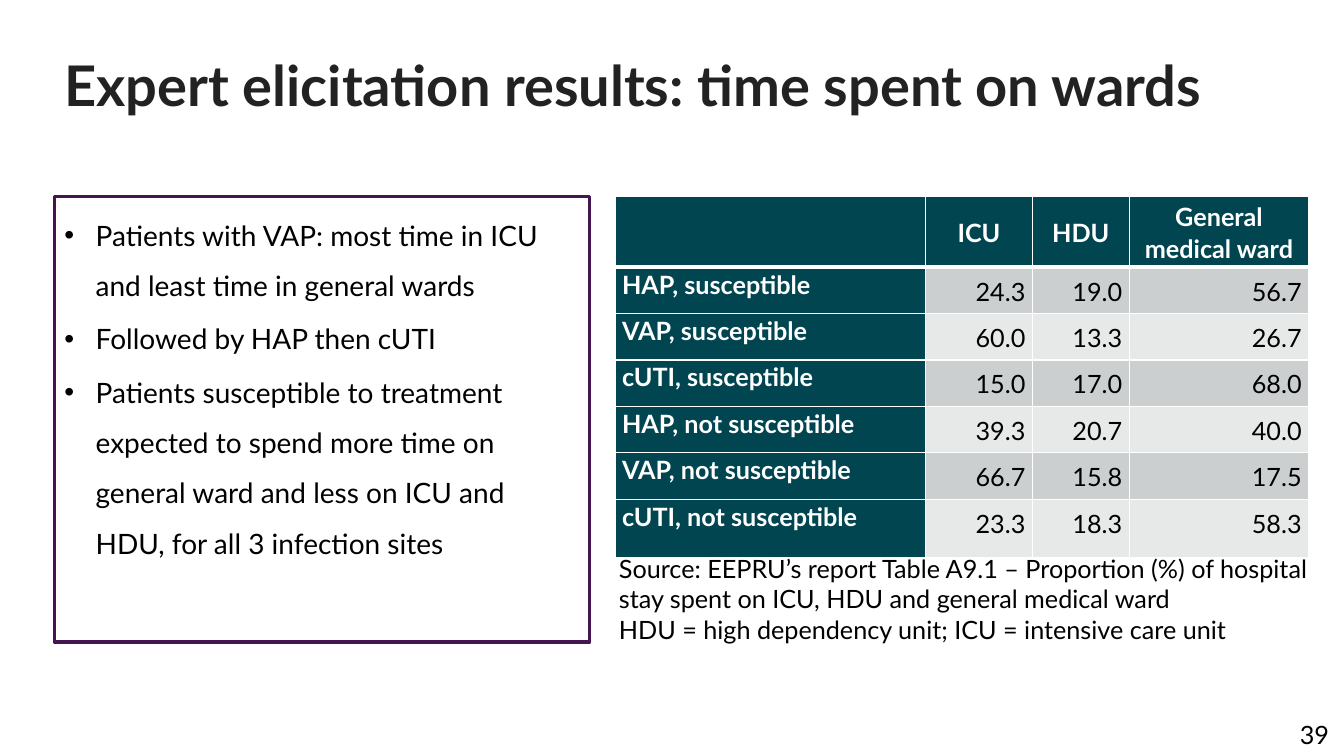
import pptx
import pptx.dml.color
import pptx.enum.text
import pptx.oxml
import pptx.oxml.ns
import pptx.util
from pptx.util import Inches, Pt

TITLE = "Expert elicitation results: time spent on wards"
FINDINGS = [
    "Patients with VAP: most time in ICU and least time in general wards",
    "Followed by HAP then cUTI",
    "Patients susceptible to treatment expected to spend more time on general ward "
    "and less on ICU and HDU, for all 3 infection sites",
]
WARD_TIMES = [
    ("", "ICU", "HDU", "General medical ward"),
    ("HAP, susceptible", "24.3", "19.0", "56.7"),
    ("VAP, susceptible", "60.0", "13.3", "26.7"),
    ("cUTI, susceptible", "15.0", "17.0", "68.0"),
    ("HAP, not susceptible", "39.3", "20.7", "40.0"),
    ("VAP, not susceptible", "66.7", "15.8", "17.5"),
    ("cUTI, not susceptible", "23.3", "18.3", "58.3"),
]
SOURCE_NOTES = [
    "Source: EEPRU’s report Table A9.1 – Proportion (%) of hospital stay spent on "
    "ICU, HDU and general medical ward",
    "HDU = high dependency unit; ICU = intensive care unit",
]
PAGE_NUMBER = "39"

COLUMN_WIDTHS = [3.08, 1.06, 0.96, 1.78]
ROW_HEIGHTS = [0.7] + [0.46] * 5 + [0.58]
TEAL, PURPLE, BLACK, WHITE = "004550", "451551", "000000", "FFFFFF"
BANDS = ["CCCFD0", "E7E9E9"]
ALIGN = pptx.enum.text.PP_ALIGN
ANCHOR = pptx.enum.text.MSO_ANCHOR


def rgb(color):
    return pptx.dml.color.RGBColor.from_string(color)


def set_font(paragraph, size, color=BLACK, bold=False):
    font = paragraph.font
    font.name, font.size, font.bold = "Lato", Pt(size), bold
    font.color.rgb = rgb(color)


def add_text(slide, box, lines, size):
    text = slide.shapes.add_textbox(*map(Inches, box))
    frame = text.text_frame
    frame.word_wrap = True
    frame.text = "\n".join(lines)
    for paragraph in frame.paragraphs:
        set_font(paragraph, size)
    return text


def add_bullet(paragraph, indent):
    props = paragraph._p.get_or_add_pPr()
    props.set("marL", str(Inches(indent)))
    props.set("indent", str(-Inches(indent)))
    namespace = pptx.oxml.ns.nsdecls("a")
    props.append(pptx.oxml.parse_xml(f'<a:buFont {namespace} typeface="Arial"/>'))
    props.append(pptx.oxml.parse_xml(f'<a:buChar {namespace} char="•"/>'))


def set_borders(cell, bottom):
    """Draw white borders, which must precede the fill in the cell's XML."""
    props = cell._tc.get_or_add_tcPr()
    namespace = pptx.oxml.ns.nsdecls("a")
    for index, (side, width) in enumerate(
        [("lnL", 1), ("lnR", 1), ("lnT", 1), ("lnB", bottom)]
    ):
        props.insert(index, pptx.oxml.parse_xml(
            f'<a:{side} {namespace} w="{Pt(width)}"><a:solidFill>'
            f'<a:srgbClr val="{WHITE}"/></a:solidFill></a:{side}>'))


def fill_cell(cell, value, row, column):
    header, label = row == 0, column == 0
    dark = header or label
    cell.text = value
    cell.fill.solid()
    cell.fill.fore_color.rgb = rgb(TEAL if dark else BANDS[(row - 1) % 2])
    cell.vertical_anchor = ANCHOR.MIDDLE if header else ANCHOR.TOP
    cell.margin_left = cell.margin_right = Inches(0.03 if header else 0.07)
    cell.margin_top = cell.margin_bottom = Inches(0 if dark else 0.07)
    paragraph = cell.text_frame.paragraphs[0]
    paragraph.alignment = ALIGN.CENTER if header else ALIGN.LEFT if label else ALIGN.RIGHT
    paragraph.line_spacing = 1.07
    paragraph.space_after = Pt(8)
    set_font(paragraph, 18, WHITE if dark else BLACK, dark)
    set_borders(cell, bottom=3 if header else 1)


def add_ward_table(slide, left, top):
    size = sum(COLUMN_WIDTHS), sum(ROW_HEIGHTS)
    table = slide.shapes.add_table(
        len(ROW_HEIGHTS), len(COLUMN_WIDTHS), *map(Inches, (left, top, *size))).table
    for column, width in zip(table.columns, COLUMN_WIDTHS):
        column.width = Inches(width)
    for row, height in zip(table.rows, ROW_HEIGHTS):
        row.height = Inches(height)
    for r, values in enumerate(WARD_TIMES):
        for c, value in enumerate(values):
            fill_cell(table.cell(r, c), value, r, c)


def main():
    deck = pptx.Presentation()
    deck.slide_width, deck.slide_height = Inches(13.33), Inches(7.5)
    slide = deck.slides.add_slide(deck.slide_layouts[5])

    title = slide.shapes.title
    title.left, title.top, title.width, title.height = map(Inches, (0.54, 0.53, 12.12, 1.4))
    title.text_frame.text = TITLE
    title.text_frame.vertical_anchor = ANCHOR.TOP
    heading = title.text_frame.paragraphs[0]
    heading.alignment = ALIGN.LEFT
    heading.line_spacing = 0.9
    set_font(heading, 40, "222222", True)

    findings = add_text(slide, (0.54, 1.95, 5.31, 4.42), FINDINGS, 20)
    findings.line.color.rgb = rgb(PURPLE)
    findings.line.width = Pt(2.25)
    for paragraph in findings.text_frame.paragraphs:
        paragraph.line_spacing = 1.5
        paragraph.space_before = Pt(2)
        add_bullet(paragraph, 0.31)

    add_ward_table(slide, 6.1, 1.95)
    add_text(slide, (6.04, 5.44, 7.15, 1.01), SOURCE_NOTES, 18)
    page = add_text(slide, (11.44, 7.09, 1.84, 0.4), [PAGE_NUMBER], 18)
    page.text_frame.paragraphs[0].alignment = ALIGN.RIGHT

    deck.save("out.pptx")


if __name__ == "__main__":
    main()
